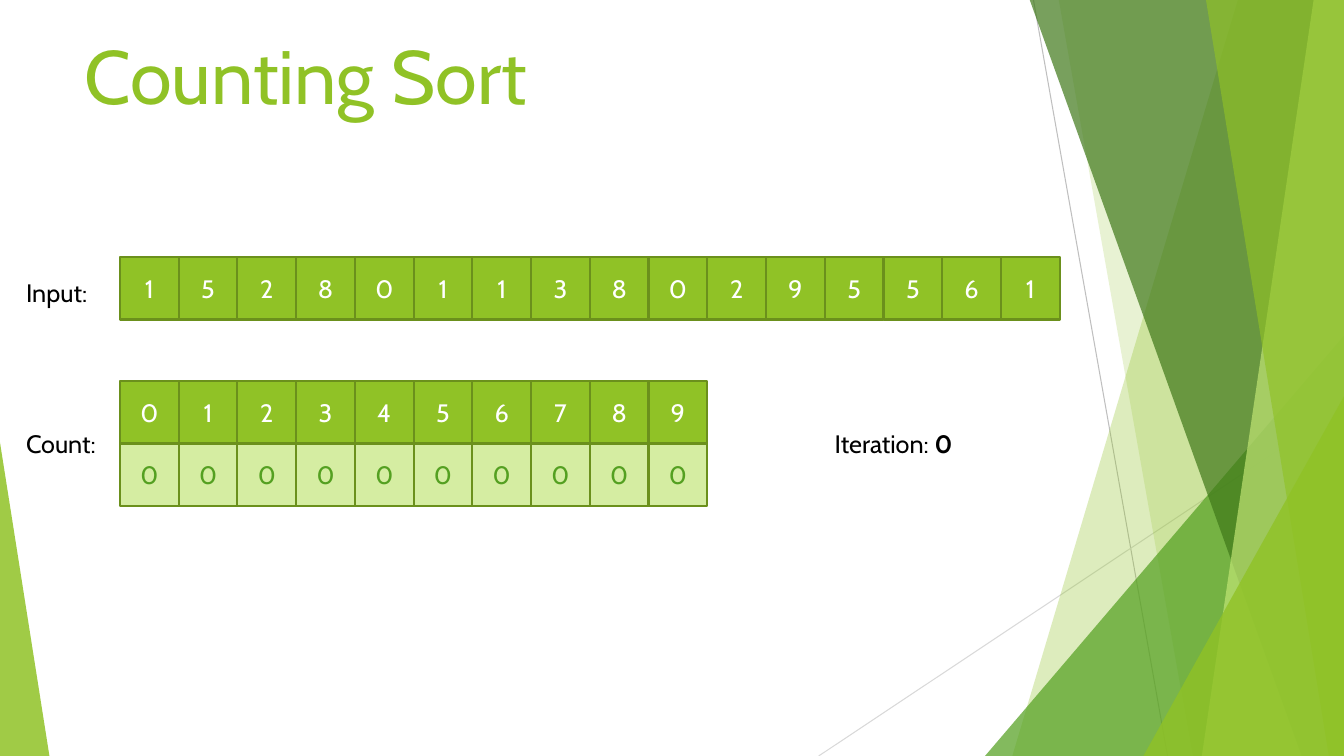
from lxml import etree
from pptx import Presentation, util as u
from pptx.dml import color
from pptx.enum import shapes, text
from pptx.oxml import ns

# Content
TITLE = "Counting Sort"
INPUT = [1, 5, 2, 8, 0, 1, 1, 3, 8, 0, 2, 9, 5, 5, 6, 1]
DIGITS = list(range(10))
COUNTS = [0] * len(DIGITS)

FONT = "Cabin"
GREEN, DARK_GREEN, OUTLINE, PALE = "90C226", "54A021", "6B901C", "D5EDA2"
WIDTH, HEIGHT, TOP = 13.33, 7.5, -0.01

# Cell rows: values, top, fill, text colour
ROW_LEFT, ROW_RIGHT, CELL_HEIGHT = 1.19, 10.51, 0.62
COUNT_TOP = 3.78
ROWS = [
    (INPUT, 2.55, GREEN, "FFFFFF"),
    (DIGITS, COUNT_TOP, GREEN, "FFFFFF"),
    (COUNTS, COUNT_TOP + CELL_HEIGHT, PALE, DARK_GREEN),
]

# Labels: left, top, width, runs as (text, bold)
LABELS = [
    (0.16, 2.7, 1.03, [("Input:", False)]),
    (0.16, 4.2, 1.03, [("Count:", False)]),
    (8.18, 4.2, 1.75, [("Iteration: ", False), ("0", True)]),
]

# Background rays: start, end, colour
RAYS = [
    ((10.25, 0), (11.58, HEIGHT), "BFBFBF"),
    ((WIDTH, 4.03), (8.12, HEIGHT), "D9D9D9"),
]

# Background facets, back to front.
# "band": left edge at the top and at the bottom, reaching the right slide edge
# "triangle": left, top, width and apex position, standing on the bottom edge
FACETS = [
    ("band", (12.28, 10.04), GREEN, 30),
    ("band", (10.5, 11.83), GREEN, 20),
    ("triangle", (9.77, 3.33, 3.56, 1), DARK_GREEN, 72),
    ("band", (10.21, 12.91), "3F7819", 70),
    ("band", (13.03, 11.92), "C0E474", 70),
    ("band", (11.96, 13.18), GREEN, 65),
    ("triangle", (11.34, 3.93, 1.99, 1), GREEN, 80),
    ("triangle", (0, 4.39, 0.49, 0), GREEN, 85),
]


def rgb(value):
    return color.RGBColor.from_string(value)


def inches(*values):
    return [u.Inches(value) for value in values]


def set_format(target, values):
    for name, value in values.items():
        setattr(target, name, value)


def add_run(paragraph, words, size, hex_color, bold=False):
    run = paragraph.add_run()
    run.text = words
    set_format(run.font, {"name": FONT, "size": u.Pt(size), "bold": bold})
    run.font.color.rgb = rgb(hex_color)


def fill_shape(shape, hex_color, opacity=100):
    shape.shadow.inherit = False
    shape.fill.solid()
    shape.fill.fore_color.rgb = rgb(hex_color)
    if opacity < 100:
        solid = shape.fill._xPr.find(ns.qn("a:solidFill"))
        etree.SubElement(solid[0], ns.qn("a:alpha"), val=str(opacity * 1000))


def add_ray(slide, start, end, hex_color):
    ray = slide.shapes.add_connector(
        shapes.MSO_CONNECTOR.STRAIGHT, *inches(*start, *end))
    ray.line.color.rgb = rgb(hex_color)
    ray.line.width = u.Pt(0.75)
    etree.SubElement(ray._element.spPr, ns.qn("a:effectLst"))


def add_facet(slide, kind, geometry, hex_color, opacity):
    if kind == "band":
        top_left, bottom_left = geometry
        corners = [(WIDTH, TOP), (WIDTH, HEIGHT), (bottom_left, HEIGHT)]
        builder = slide.shapes.build_freeform(*inches(top_left, TOP))
        builder.add_line_segments([inches(*corner) for corner in corners])
        facet = builder.convert_to_shape()
    else:
        left, top, width, apex = geometry
        facet = slide.shapes.add_shape(
            shapes.MSO_SHAPE.ISOSCELES_TRIANGLE,
            *inches(left, top, width, HEIGHT - top))
        facet.adjustments[0] = apex
    fill_shape(facet, hex_color, opacity)
    facet.line.fill.background()


def add_row(slide, values, top, fill, text_color):
    cell_width = (ROW_RIGHT - ROW_LEFT) / len(INPUT)
    for column, value in enumerate(values):
        cell = slide.shapes.add_shape(
            shapes.MSO_SHAPE.RECTANGLE,
            *inches(ROW_LEFT + column * cell_width, top, cell_width, CELL_HEIGHT))
        fill_shape(cell, fill)
        cell.line.color.rgb = rgb(OUTLINE)
        cell.line.width = u.Pt(1.5)
        cell.text_frame.vertical_anchor = text.MSO_ANCHOR.MIDDLE
        paragraph = cell.text_frame.paragraphs[0]
        paragraph.alignment = text.PP_ALIGN.CENTER
        add_run(paragraph, str(value), 18, text_color)


def add_label(slide, left, top, width, runs):
    label = slide.shapes.add_textbox(*inches(left, top, width, 0.4))
    set_format(label.text_frame, {
        "word_wrap": True, "auto_size": text.MSO_AUTO_SIZE.SHAPE_TO_FIT_TEXT})
    for words, bold in runs:
        add_run(label.text_frame.paragraphs[0], words, 18, "000000", bold)


def add_title(slide):
    title = slide.shapes.title
    left, top, width, height = inches(0.74, 0.24, 9.4, 1.7)
    set_format(title, {"left": left, "top": top, "width": width, "height": height})
    set_format(title.text_frame, {
        "vertical_anchor": text.MSO_ANCHOR.TOP, "word_wrap": True,
        "auto_size": text.MSO_AUTO_SIZE.NONE})
    paragraph = title.text_frame.paragraphs[0]
    paragraph.alignment = text.PP_ALIGN.LEFT
    add_run(paragraph, TITLE, 54, GREEN)


def main():
    presentation = Presentation()
    presentation.slide_width, presentation.slide_height = inches(WIDTH, HEIGHT)
    slide = presentation.slides.add_slide(presentation.slide_layouts[5])

    # Background
    for ray in RAYS:
        add_ray(slide, *ray)
    for facet in FACETS:
        add_facet(slide, *facet)

    # Title, arrays and labels
    add_title(slide)
    for row in ROWS:
        add_row(slide, *row)
    for label in LABELS:
        add_label(slide, *label)

    presentation.save("out.pptx")


if __name__ == "__main__":
    main()
